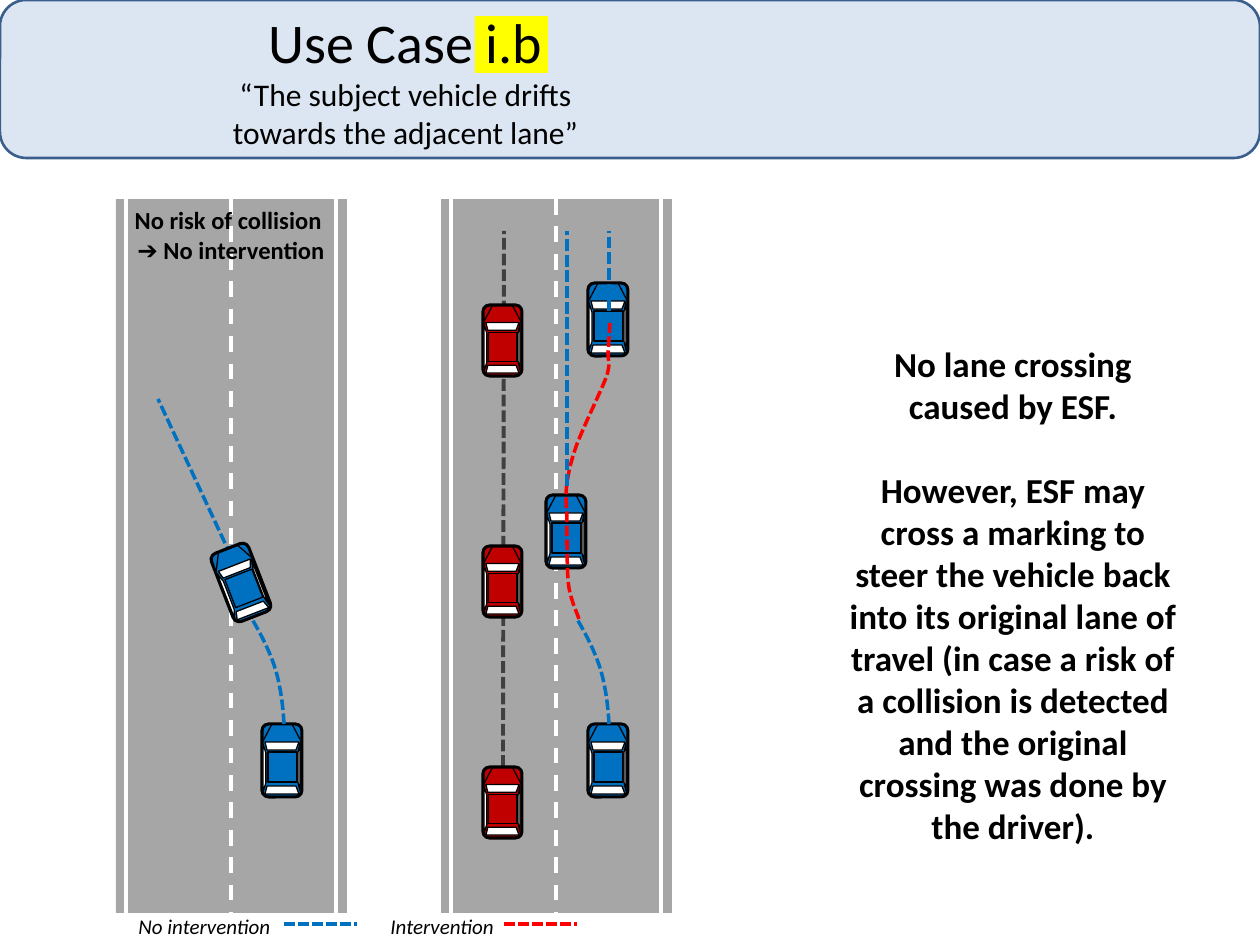
"""Draw the lane drift use case slide with two roads, cars and routes."""
from dataclasses import dataclass
from math import cos, radians, sin
from typing import NamedTuple, Optional

from lxml import etree
from pptx import Presentation
from pptx.dml.color import RGBColor
from pptx.enum.dml import MSO_LINE
from pptx.enum.shapes import MSO_CONNECTOR, MSO_SHAPE
from pptx.enum.text import MSO_ANCHOR, MSO_AUTO_SIZE, PP_ALIGN
from pptx.oxml.ns import qn
from pptx.util import Pt

RECT = MSO_SHAPE.RECTANGLE
ROUND = MSO_SHAPE.ROUNDED_RECTANGLE
BODY = MSO_SHAPE.FLOWCHART_ALTERNATE_PROCESS
ROOF = MSO_SHAPE.FLOWCHART_PROCESS
STRAIGHT = MSO_CONNECTOR.STRAIGHT
LONG, SHORT = MSO_LINE.DASH, MSO_LINE.SQUARE_DOT
LEFT, CENTER = PP_ALIGN.LEFT, PP_ALIGN.CENTER
TOP, MIDDLE = MSO_ANCHOR.TOP, MSO_ANCHOR.MIDDLE
FIXED = MSO_AUTO_SIZE.NONE
EMU = 914400 / 126


@dataclass(frozen=True)
class Theme:
    """Hold the colours, font and type sizes."""
    black: str = "000000"
    white: str = "FFFFFF"
    blue: str = "0070C0"
    red: str = "C00000"
    alert: str = "FF0000"
    dark: str = "404040"
    grey: str = "A6A6A6"
    pale: str = "DCE6F2"
    navy: str = "3A5F8C"
    yellow: str = "FFFF00"
    font: str = "Calibri"
    head: int = 32
    sub: int = 18
    body: int = 20
    label: int = 14
    key: int = 12


class Pen(NamedTuple):
    """Describe a line."""
    color: str
    width: float
    dash: Optional[MSO_LINE] = None


class Car(NamedTuple):
    """Describe a car by its box, paint and turn in degrees."""
    x: int
    y: int
    paint: str
    wide: int = 40
    high: int = 73
    turn: float = 0


T = Theme()
THIN = Pen(T.black, 0.75)
DRIFT = Pen(T.blue, 2, SHORT)
AHEAD = Pen(T.blue, 2.25, SHORT)
STEER = Pen(T.alert, 2, SHORT)
PANES = [
    [(3, 18), (5, 26), (34, 26), (37, 18)],
    [(3, 70), (5, 62), (34, 62), (37, 70)],
    [(1, 68), (4, 59), (4, 29), (1, 20)],
    [(38, 19), (36, 29), (36, 58), (38, 67)],
]
HOOD = [((0, 19), (10, 0)), ((30, 0), (40, 19))]
CARS = [Car(588, 724, T.blue), Car(546, 495, T.blue), Car(588, 283, T.blue)]
PACE = [Car(483, y, T.red, 39, 71) for y in (767, 546, 305)]
LOST = [Car(262, 724, T.blue), Car(221, 546, T.blue, turn=-21.2)]
BEND = [(0, 0), (-1, -18), (-3, -35), (-8, -53), (-13, -70), (-22, -88), (-32, -105)]
BACK = [(579, 619), (577, 613), (575, 609), (573, 603), (571, 596), (569, 592),
        (568, 579), (567, 566), (567, 539), (567, 523), (567, 507), (565, 496),
        (567, 483), (569, 470), (571, 461), (577, 444), (584, 426), (600, 393),
        (606, 378), (611, 363), (608, 362), (608, 353), (609, 344), (609, 333),
        (610, 323)]


def emu(px: float) -> int:
    """Turn px into EMU."""
    return round(px * EMU)


def ink(line, pen: Optional[Pen]) -> None:
    """Format a line, or hide it."""
    if pen is None:
        line.fill.background()
        return
    line.color.rgb = RGBColor.from_string(pen.color)
    line.width = Pt(pen.width)
    if pen.dash:
        line.dash_style = pen.dash


def coat(shape, fill: Optional[str], pen: Optional[Pen]) -> None:
    """Set fill, line and no shadow."""
    shape.shadow.inherit = False
    if fill:
        shape.fill.solid()
        shape.fill.fore_color.rgb = RGBColor.from_string(fill)
    else:
        shape.fill.background()
    ink(shape.line, pen)


def block(shapes, kind, box, fill: str, pen: Optional[Pen] = None, turn: float = 0) -> None:
    """Draw a preset shape."""
    shape = shapes.add_shape(kind, *map(emu, box))
    coat(shape, fill, pen)
    shape.rotation = turn


def rule(shapes, start, end, pen: Pen) -> None:
    """Draw a straight line."""
    line = shapes.add_connector(STRAIGHT, *map(emu, (*start, *end)))
    ink(line.line, pen)
    etree.SubElement(line.element.spPr, qn("a:effectLst"))


def trace(shapes, pts, pen: Pen, fill: Optional[str] = None) -> None:
    """Draw an outline, closed if it is filled."""
    pts = [(emu(x), emu(y)) for x, y in pts]
    form = shapes.build_freeform(*pts[0])
    form.add_line_segments(pts[1:], close=bool(fill))
    coat(form.convert_to_shape(), fill, pen)


def curve(pts, steps: int = 8) -> list:
    """Sample a chain of cubic curves."""
    out = [pts[0]]
    for i in range(0, len(pts) - 1, 3):
        for k in range(1, steps + 1):
            t = k / steps
            mix = ((1 - t) ** 3, 3 * t * (1 - t) ** 2, 3 * t * t * (1 - t), t ** 3)
            out.append(tuple(sum(m * p[a] for m, p in zip(mix, pts[i:i + 4])) for a in (0, 1)))
    return out


def drive(shapes, car: Car) -> None:
    """Draw a car as a group."""
    group = shapes.add_group_shape().shapes
    mid_x, mid_y = car.x + car.wide / 2, car.y + car.high / 2
    c, s = cos(radians(car.turn)), sin(radians(car.turn))

    def spot(x: float, y: float) -> tuple:
        dx, dy = (x / 40 - 0.5) * car.wide, (y / 73 - 0.5) * car.high
        return mid_x + dx * c - dy * s, mid_y + dx * s + dy * c

    for kind, (x, y, w, h), width in ((BODY, (0, 0, 40, 73), 1.75), (ROOF, (6, 28, 29, 30), 0.75)):
        px, py = spot(x + w / 2, y + h / 2)
        w, h = w * car.wide / 40, h * car.high / 73
        block(group, kind, (px - w / 2, py - h / 2, w, h), car.paint, Pen(T.black, width), car.turn)
    for pane in PANES:
        trace(group, [spot(*p) for p in pane], THIN, T.white)
    for start, end in HOOD:
        rule(group, spot(*start), spot(*end), THIN)


def road(shapes, x: int) -> None:
    """Draw a road with two lanes."""
    block(shapes, RECT, (x, 199, 231, 714), T.grey)
    for gap, dash in ((10, None), (115, LONG), (220, None)):
        rule(shapes, (x + gap, 199), (x + gap, 913), Pen(T.white, 2.25, dash))


def write(frame, *lines: str, sizes=(T.body,), bold=False, italic=False,
          align=CENTER, anchor=TOP, after=0) -> None:
    """Fill a text frame, one paragraph a line."""
    frame.word_wrap = True
    frame.auto_size = FIXED
    frame.vertical_anchor = anchor
    for i, line in enumerate(lines):
        par = frame.add_paragraph() if i else frame.paragraphs[0]
        par.alignment = align
        if i < len(lines) - 1 and after:
            par.space_after = Pt(after)
        run = par.add_run()
        run.text = line
        font = run.font
        font.name, font.size = T.font, Pt(sizes[min(i, len(sizes) - 1)])
        font.bold, font.italic = bold, italic
        font.color.rgb = RGBColor.from_string(T.black)


def label(shapes, box, *lines: str, **form):
    """Add a text box and return its frame."""
    frame = shapes.add_textbox(*map(emu, box)).text_frame
    write(frame, *lines, **form)
    return frame


def main() -> None:
    """Build and save the slide."""
    deck = Presentation()
    deck.slide_width, deck.slide_height = emu(1260), emu(945)
    slide = deck.slides.add_slide(deck.slide_layouts[5])
    shapes = slide.shapes
    block(shapes, ROUND, (0, 0, 1260, 158), T.pale, Pen(T.navy, 1.5))

    road(shapes, 441)
    for car in CARS:
        drive(shapes, car)
    rule(shapes, (609, 311), (609, 231), AHEAD)
    trace(shapes, curve([(609 + x, 724 + y) for x, y in BEND]), DRIFT)
    trace(shapes, curve(BACK), STEER)
    rule(shapes, (503, 767), (504, 231), Pen(T.dark, 2.25, SHORT))
    for car in PACE:
        drive(shapes, car)

    road(shapes, 116)
    rule(shapes, (231, 556), (158, 399), DRIFT)
    for car in LOST:
        drive(shapes, car)
    trace(shapes, curve([(284 + x, 724 + y) for x, y in BEND]), DRIFT)
    label(shapes, (105, 199, 252, 72), "No risk of collision ", "➔ No intervention",
          sizes=(T.label,), bold=True)

    block(shapes, RECT, (475, 16, 73, 57), T.yellow)
    title = shapes.title
    title.left, title.top, title.width, title.height = map(emu, (180, 0, 451, 158))
    write(title.text_frame, "Use Case i.b",
          "“The subject vehicle drifts towards the adjacent lane”",
          sizes=(T.head, T.sub), anchor=MIDDLE)
    title.element.getparent().append(title.element)

    rule(shapes, (567, 486), (567, 231), AHEAD)
    key = label(shapes, (126, 907, 483, 38), "No intervention\tIntervention",
                sizes=(T.key,), italic=True, align=LEFT)
    tabs = etree.SubElement(key.paragraphs[0]._p.get_or_add_pPr(), qn("a:tabLst"))
    etree.SubElement(tabs, qn("a:tab"), pos=str(emu(252)), algn="l")
    for x, pen in ((284, DRIFT), (504, STEER)):
        rule(shapes, (x, 924), (x + 73, 924), pen)
    label(shapes, (829, 336, 368, 522), "No lane crossing caused by ESF.",
          "However, ESF may cross a marking to steer the vehicle back into its original "
          "lane of travel (in case a risk of a collision is detected and the original "
          "crossing was done by the driver).", bold=True, after=24)
    deck.save("out.pptx")


if __name__ == "__main__":
    main()
